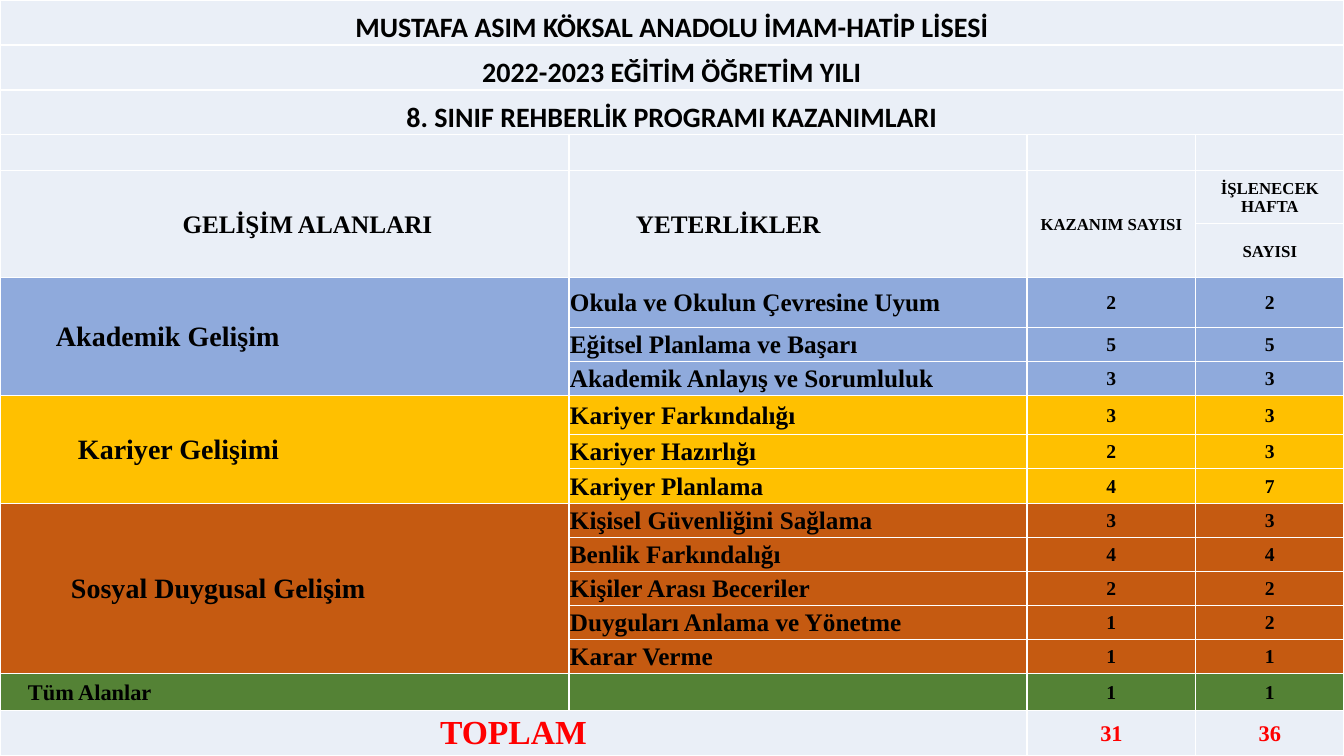
from lxml import etree
from pptx import Presentation
from pptx.dml.color import RGBColor
from pptx.enum.text import MSO_ANCHOR, PP_ALIGN
from pptx.oxml.ns import qn
from pptx.util import Emu, Pt

LEFT, CENTER = PP_ALIGN.LEFT, PP_ALIGN.CENTER
MIDDLE, BOTTOM = MSO_ANCHOR.MIDDLE, MSO_ANCHOR.BOTTOM
WIDTH, HEIGHT = 1344, 756
SCALE = 12192000 / WIDTH
SERIF, SANS = "Times New Roman", "Calibri"
BLACK, WHITE, RED = "000000", "FFFFFF", "FF0000"
PALE, BLUE, GOLD, RUST, GREEN = "EAEFF7", "8FAADC", "FFC000", "C55A11", "548235"

COLUMNS = [569, 458, 169, 148]
ROWS = [45, 45, 45, 36, 53, 54, 50, 34, 34, 39, 34, 35, 34, 34, 34, 34, 34, 37, 45]
HEADING_ROW, FIRST_AREA_ROW = 4, 6

TITLES = [
    "MUSTAFA ASIM KÖKSAL ANADOLU İMAM-HATİP LİSESİ",
    "2022-2023 EĞİTİM ÖĞRETİM YILI",
    "8. SINIF REHBERLİK PROGRAMI KAZANIMLARI",
]
# Area name, fill, left inset, font size, then (competency, outcomes, weeks)
AREAS = [
    ("Akademik Gelişim", BLUE, 56, 20, [
        ("Okula ve Okulun Çevresine Uyum", 2, 2),
        ("Eğitsel Planlama ve Başarı", 5, 5),
        ("Akademik Anlayış ve Sorumluluk", 3, 3),
    ]),
    ("Kariyer Gelişimi", GOLD, 78, 20, [
        ("Kariyer Farkındalığı", 3, 3),
        ("Kariyer Hazırlığı", 2, 3),
        ("Kariyer Planlama", 4, 7),
    ]),
    ("Sosyal Duygusal Gelişim", RUST, 71, 20, [
        ("Kişisel Güvenliğini Sağlama", 3, 3),
        ("Benlik Farkındalığı", 4, 4),
        ("Kişiler Arası Beceriler", 2, 2),
        ("Duyguları Anlama ve Yönetme", 1, 2),
        ("Karar Verme", 1, 1),
    ]),
    ("Tüm Alanlar", GREEN, 28, 16, [("", 1, 1)]),
]


def px(length):
    return Emu(round(length * SCALE))


def color(value):
    return RGBColor.from_string(value)


def set_borders(cell):
    props = cell._tc.get_or_add_tcPr()
    for index, side in enumerate(("a:lnL", "a:lnR", "a:lnT", "a:lnB")):
        line = etree.Element(qn(side), w=str(Pt(1)))
        fill = etree.SubElement(line, qn("a:solidFill"))
        etree.SubElement(fill, qn("a:srgbClr"), val=WHITE)
        props.insert(index, line)


def style_cell(cell, fill):
    margins = {"margin_left": 1, "margin_right": 1, "margin_top": 1, "margin_bottom": 0}
    for name, value in margins.items():
        setattr(cell, name, px(value))
    cell.fill.solid()
    cell.fill.fore_color.rgb = color(fill)
    set_borders(cell)


def write(cell, text, size, align=CENTER, inset=1, font=SERIF, ink=BLACK, anchor=MIDDLE):
    cell.margin_left = px(inset)
    cell.vertical_anchor = anchor
    para = cell.text_frame.paragraphs[0]
    para.alignment = align
    span = para.add_run()
    span.text = text
    for name, value in {"name": font, "size": Pt(size), "bold": True}.items():
        setattr(span.font, name, value)
    span.font.color.rgb = color(ink)


def add_titles(grid):
    for row, title in enumerate(TITLES):
        grid.cell(row, 0).merge(grid.cell(row, 3))
        write(grid.cell(row, 0), title, 20, font=SANS, anchor=BOTTOM)


def add_headings(grid, row):
    for column in range(3):
        grid.cell(row, column).merge(grid.cell(row + 1, column))
    # One em space sets the wide gap between the two words
    write(grid.cell(row, 0), "GELİŞİM ALANLARI", 18, inset=47)
    write(grid.cell(row, 1), "YETERLİKLER", 18, LEFT, 67)
    write(grid.cell(row, 2), "KAZANIM SAYISI", 12)
    write(grid.cell(row, 3), "İŞLENECEK HAFTA", 12)
    write(grid.cell(row + 1, 3), "SAYISI", 12)


def add_area(grid, top, name, fill, inset, size, competencies):
    """Fill one development area and return the row below it."""
    end = top + len(competencies)
    for row, (competency, *counts) in enumerate(competencies, top):
        for column in range(len(COLUMNS)):
            cell = grid.cell(row, column)
            cell.fill.fore_color.rgb = color(fill)
        if competency:
            write(grid.cell(row, 1), competency, 18, LEFT)
        for column, count in enumerate(counts, 2):
            write(grid.cell(row, column), str(count), 14)
    if len(competencies) > 1:
        grid.cell(top, 0).merge(grid.cell(end - 1, 0))
    write(grid.cell(top, 0), name, size, LEFT, inset)
    return end


def add_total(grid, row):
    grid.cell(row, 0).merge(grid.cell(row, 1))
    for column, text, size in ((0, "TOPLAM", 24), (2, "31", 16), (3, "36", 16)):
        write(grid.cell(row, column), text, size, ink=RED)


def add_programme_table(page, box):
    frame = page.shapes.add_table(len(ROWS), len(COLUMNS), *map(px, box))
    grid = frame.table
    grid.first_row = grid.horz_banding = False
    for column, width in zip(grid.columns, COLUMNS):
        column.width = px(width)
    for row, height in zip(grid.rows, ROWS):
        row.height = px(height)
    for cell in grid.iter_cells():
        style_cell(cell, PALE)

    # Regions from top to bottom
    add_titles(grid)
    add_headings(grid, HEADING_ROW)
    row = FIRST_AREA_ROW
    for area in AREAS:
        row = add_area(grid, row, *area)
    add_total(grid, row)


def main():
    deck = Presentation()
    deck.slide_width, deck.slide_height = px(WIDTH), px(HEIGHT)
    page = deck.slides.add_slide(deck.slide_layouts[6])
    add_programme_table(page, (0, 0, WIDTH, HEIGHT))
    deck.save("out.pptx")


if __name__ == "__main__":
    main()
